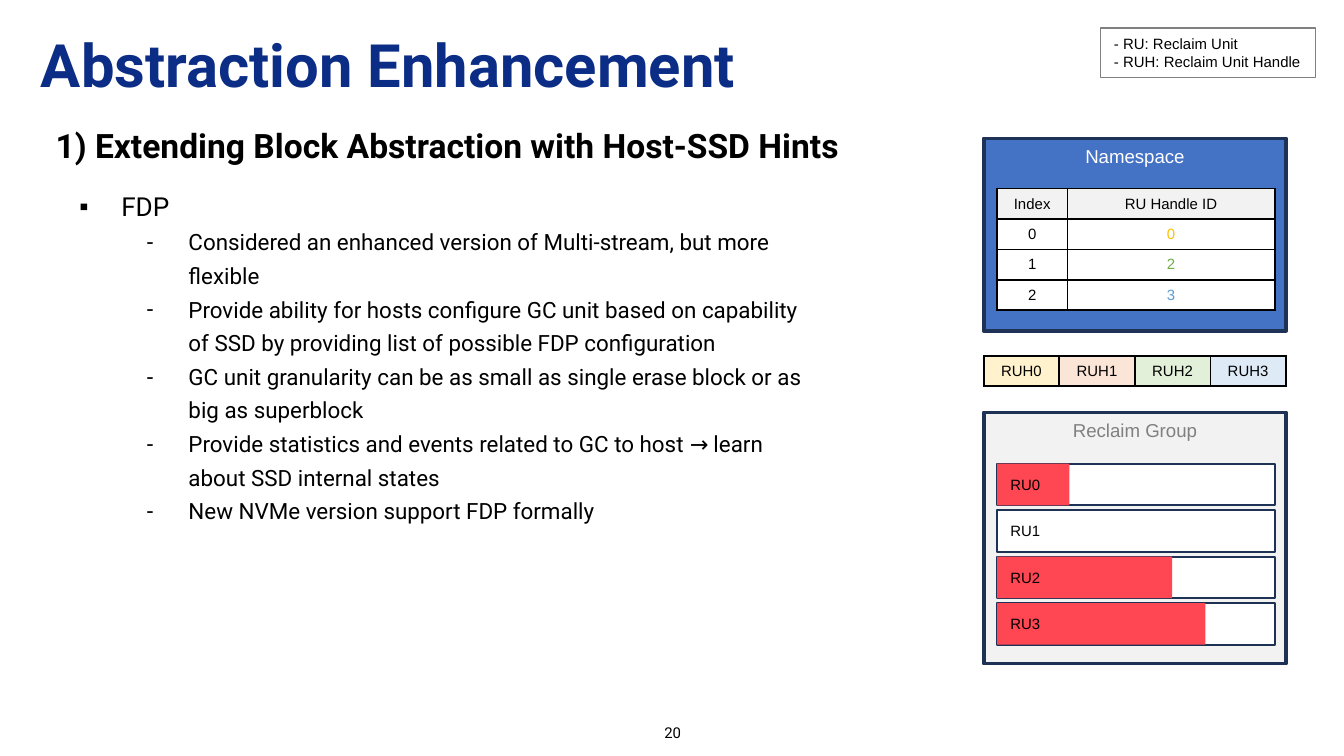
from lxml import etree
from pptx import Presentation
from pptx.dml.color import RGBColor
from pptx.enum import shapes, text
from pptx.oxml import ns
from pptx.util import Pt

HUES = {
    "black": "000000", "white": "FFFFFF", "title": "0B2D86", "blue": "4472C4",
    "navy": "1E3256", "pale": "F2F2F2", "gray": "808080", "red": "FF4653",
    "gold": "FFC000", "green": "70AD47", "sky": "5B9BD5",
    "cream": "FFF2CC", "peach": "FBE5D6", "mint": "E2F0D9", "ice": "DEEBF7",
}
TITLE = "Abstraction Enhancement"
HEAD = "1) Extending Block Abstraction with Host-SSD Hints"
TOPIC = "FDP"
POINTS = [
    "Considered an enhanced version of Multi-stream, but more flexible",
    "Provide ability for hosts configure GC unit based on capability of SSD "
    "by providing list of possible FDP configuration",
    "GC unit granularity can be as small as single erase block or as big as superblock",
    "Provide statistics and events related to GC to host → learn about SSD internal states",
    "New NVMe version support FDP formally",
]
LEGEND = ["- RU: Reclaim Unit", "- RUH: Reclaim Unit Handle"]
# Each cell: words, fill, font colour
INDEX = [[("Index", "pale", "black"), ("RU Handle ID", "pale", "black")]] + [
    [(str(i), "white", "black"), (ruh, "white", hue)]
    for i, (ruh, hue) in enumerate([("0", "gold"), ("2", "green"), ("3", "sky")])
]
HANDLES = [[(f"RUH{i}", hue, "black")
            for i, hue in enumerate(["cream", "peach", "mint", "ice"])]]
UNITS = [("RU0", 0.26), ("RU1", 0), ("RU2", 0.63), ("RU3", 0.75)]  # name, share used

LEFT, WIDE = 527, 162      # right-hand panels
INNER, SPAN = 534.2, 148.8  # parts within a panel
TOP, STEP, TALL = 248.4, 24.9, 22.3  # reclaim unit bars

MID, HIGH = text.MSO_ANCHOR.MIDDLE, text.MSO_ANCHOR.TOP
CENTER, START = text.PP_ALIGN.CENTER, text.PP_ALIGN.LEFT
ROBOTO = {"name": "Roboto"}
SMALL = {"name": "Arial", "size": Pt(8)}
LABEL = {"name": "Arial", "size": Pt(10)}


def rgb(hue):
    return RGBColor.from_string(HUES[hue])


def write(par, words, form, hue="black", align=START):
    par.alignment = align
    run = par.add_run()
    run.text = words
    for key, val in form.items():
        setattr(run.font, key, val)
    run.font.color.rgb = rgb(hue)


def setup(frame, anchor, side=7.2, wrap=True):
    form = {"word_wrap": wrap, "vertical_anchor": anchor,
            "margin_left": Pt(side), "margin_right": Pt(side),
            "margin_top": Pt(3.6), "margin_bottom": Pt(3.6)}
    for key, val in form.items():
        setattr(frame, key, val)
    return frame


def note(slide, box, words, form, hue="black", align=START, side=5.3):
    frame = setup(slide.shapes.add_textbox(*map(Pt, box)).text_frame, MID, side)
    write(frame.paragraphs[0], words, form, hue, align)
    return frame


def rect(slide, box, fill=None, line=None, width=1):
    shape = slide.shapes.add_shape(shapes.MSO_SHAPE.RECTANGLE, *map(Pt, box))
    shape.shadow.inherit = False
    if fill:
        shape.fill.solid()
        shape.fill.fore_color.rgb = rgb(fill)
    else:
        shape.fill.background()
    if line:
        shape.line.color.rgb = rgb(line)
        shape.line.width = Pt(width)
    else:
        shape.line.fill.background()
    return shape


def panel(slide, top, tall, words, fill, hue):
    shape = rect(slide, (LEFT, top, WIDE, tall), fill, "navy", 2)
    write(setup(shape.text_frame, HIGH).paragraphs[0], words, LABEL, hue, CENTER)


def bullet(par, mark, left):
    par.line_spacing = 1.25
    props = par._p.get_or_add_pPr()
    props.set("marL", str(Pt(left)))
    props.set("indent", str(Pt(-22.5)))
    tint = etree.SubElement(props, ns.qn("a:buClr"))
    etree.SubElement(tint, ns.qn("a:srgbClr"), val=HUES["black"])
    etree.SubElement(props, ns.qn("a:buFont"), typeface="Arial")
    etree.SubElement(props, ns.qn("a:buChar"), char=mark)


def edge(cell):
    """Give all four sides of a cell a black border."""
    props = cell._tc.get_or_add_tcPr()
    for side in ("lnL", "lnR", "lnT", "lnB"):
        line = etree.SubElement(props, ns.qn(f"a:{side}"), w=str(Pt(1)))
        fill = etree.SubElement(line, ns.qn("a:solidFill"))
        etree.SubElement(fill, ns.qn("a:srgbClr"), val=HUES["black"])


def grid(slide, left, top, cols, rows, tall=16.3):
    box = (left, top, sum(cols), tall * len(rows))
    table = slide.shapes.add_table(len(rows), len(cols), *map(Pt, box)).table
    for col, width in zip(table.columns, cols):
        col.width = Pt(width)
    for r, row in enumerate(rows):
        table.rows[r].height = Pt(tall)
        for c, (words, fill, hue) in enumerate(row):
            cell = table.cell(r, c)
            edge(cell)
            cell.fill.solid()
            cell.fill.fore_color.rgb = rgb(fill)
            cell.vertical_anchor = MID
            cell.margin_top = cell.margin_bottom = Pt(2)
            write(cell.text_frame.paragraphs[0], words, SMALL, hue, CENTER)


def main():
    deck = Presentation()
    deck.slide_width, deck.slide_height = Pt(720), Pt(405)
    slide = deck.slides.add_slide(deck.slide_layouts[6])

    title = note(slide, (16.6, 12.2, 491, 49), TITLE,
                 {**ROBOTO, "size": Pt(32), "bold": True}, "title")
    title.paragraphs[0].line_spacing = 0.9
    note(slide, (24.5, 61.2, 670, 33), HEAD, {**ROBOTO, "size": Pt(18), "bold": True})
    note(slide, (279.4, 383.8, 162, 17.3), "20", {**ROBOTO, "size": Pt(8)}, align=CENTER)

    body = note(slide, (25.9, 94.3, 415.4, 283.7), TOPIC, {**ROBOTO, "size": Pt(14)})
    body.vertical_anchor = HIGH
    bullet(body.paragraphs[0], "▪", 33.8)
    for words in POINTS:
        par = body.add_paragraph()
        par.level = 1
        bullet(par, "-", 69.8)
        write(par, words, {**ROBOTO, "size": Pt(12)})

    panel(slide, 74.2, 103, "Namespace", "blue", "white")
    grid(slide, INNER, 101, (37.6, 111.2), INDEX)
    grid(slide, LEFT, 190.6, [WIDE / 4] * 4, HANDLES)

    panel(slide, 221, 134.6, "Reclaim Group", "pale", "gray")
    for i, (name, share) in enumerate(UNITS):
        top = TOP + i * STEP
        rect(slide, (INNER, top, SPAN, TALL), "white", "navy")
        if share:
            rect(slide, (INNER, top, SPAN * share, TALL), "red")
        note(slide, (INNER, top, SPAN, TALL), name, SMALL, side=7.2)

    legend = setup(rect(slide, (589.7, 15.1, 115.2, 26.6), None, "gray", 0.75).text_frame,
                   HIGH, wrap=False)
    write(legend.paragraphs[0], LEGEND[0], SMALL)
    write(legend.add_paragraph(), LEGEND[1], SMALL)

    deck.save("out.pptx")


if __name__ == "__main__":
    main()
